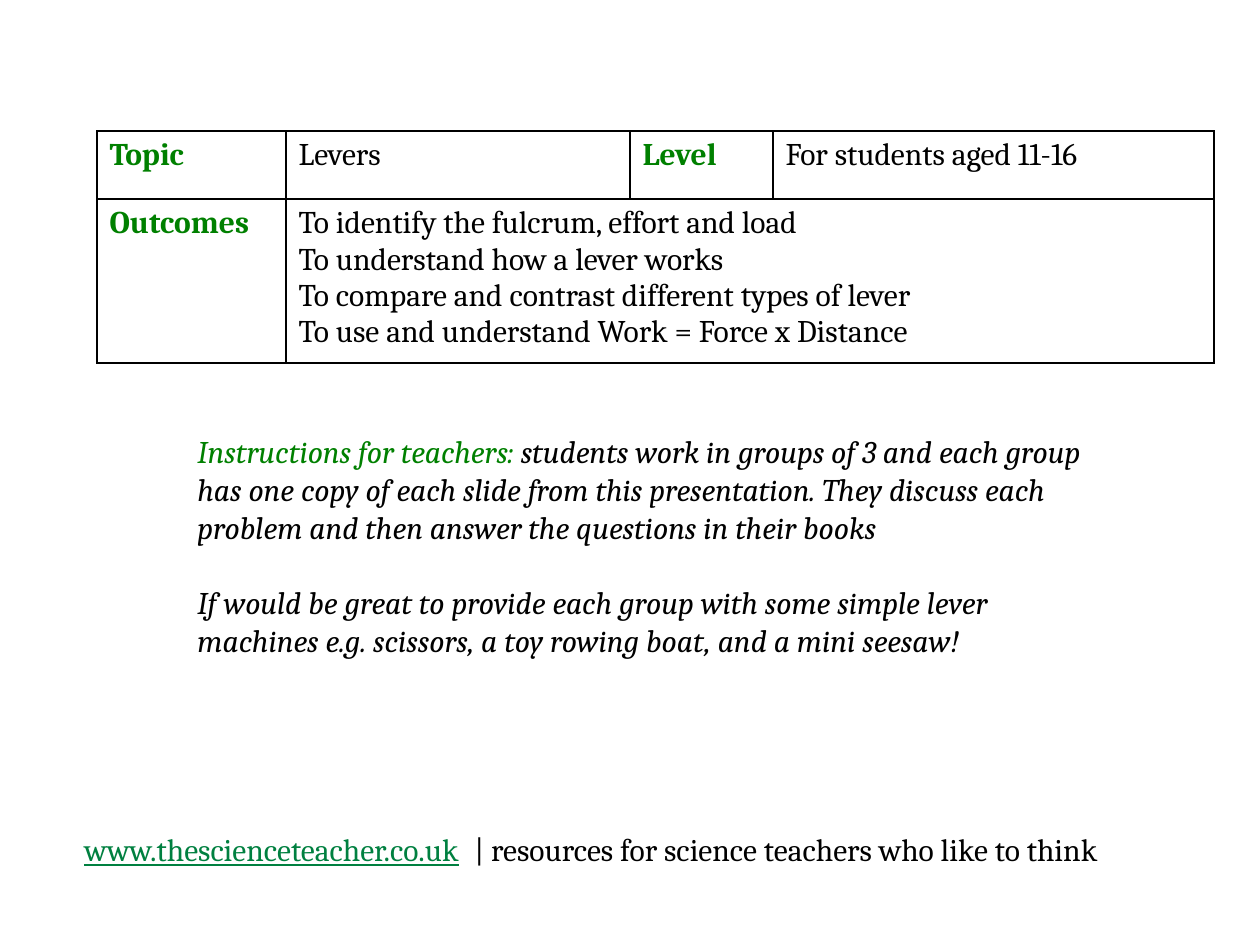
import pptx
import pptx.util
import pptx.dml.color
import pptx.oxml
import pptx.oxml.ns

THEME = {
    "font": "Cambria", "size": 18, "gap": 21.6, "line": 1,
    "ink": "000000", "green": "008000", "link": "008040",
}
SCALE = 914400 / 126


def px(num):
    return pptx.util.Emu(round(num * SCALE))


def add_run(para, text, color="ink", **style):
    """Add one run; style may set bold, italic or underline."""
    run = para.add_run()
    run.text = text
    font = run.font
    font.name = THEME["font"]
    font.size = pptx.util.Pt(THEME["size"])
    font.color.rgb = pptx.dml.color.RGBColor.from_string(THEME[color])
    for key, value in style.items():
        setattr(font, key, value)


deck = pptx.Presentation()
deck.slide_width, deck.slide_height = px(1260), px(945)
slide = deck.slides.add_slide(deck.slide_layouts[6])

# Footer, with a tab stop between the address and the motto
foot = slide.shapes.add_textbox(px(72), px(824), px(1116), px(50)).text_frame
foot.word_wrap = True
para = foot.paragraphs[0]
tabs = pptx.oxml.parse_xml(
    f'<a:tabLst {pptx.oxml.ns.nsdecls("a")}><a:tab pos="{px(390)}" algn="l"/></a:tabLst>')
para._p.get_or_add_pPr().append(tabs)
add_run(para, "www.thescienceteacher.co.uk", "link", underline=True)
add_run(para, "\t", "green")
add_run(para, "| resources for science teachers who like to think")

# Lesson table: heading cells are green and bold
cols = [189, 344, 143, 441]
rows = [68, 164]
cells = [
    (0, 0, True, ["Topic"]),
    (0, 1, False, ["Levers"]),
    (0, 2, True, ["Level"]),
    (0, 3, False, ["For students aged 11-16"]),
    (1, 0, True, ["Outcomes"]),
    (1, 1, False, [
        "To identify the fulcrum, effort and load",
        "To understand how a lever works",
        "To compare and contrast different types of lever",
        "To use and understand Work = Force x Distance",
    ]),
]
frame = slide.shapes.add_table(
    len(rows), len(cols), px(97), px(131), px(sum(cols)), px(sum(rows)))
table = frame.table
table.first_row = table.horz_banding = False
for col, width in zip(table.columns, cols):
    col.width = px(width)
for row, height in zip(table.rows, rows):
    row.height = px(height)
table.cell(1, 1).merge(table.cell(1, 3))

for cell in table.iter_cells():
    props = cell._tc.get_or_add_tcPr()
    for side in "LRTB":
        props.append(pptx.oxml.parse_xml(
            f'<a:ln{side} {pptx.oxml.ns.nsdecls("a")} w="{pptx.util.Pt(THEME["line"])}">'
            f'<a:solidFill><a:srgbClr val="{THEME["ink"]}"/></a:solidFill></a:ln{side}>'))
    cell.fill.background()

for row, col, head, lines in cells:
    text = table.cell(row, col).text_frame
    for num, line in enumerate(lines):
        para = text.add_paragraph() if num else text.paragraphs[0]
        add_run(para, line, "green" if head else "ink", bold=head)

# Notes for teachers
guide = slide.shapes.add_textbox(px(185), px(426), px(942), px(242)).text_frame
guide.word_wrap = True
para = guide.paragraphs[0]
add_run(para, "Instructions for teachers: ", "green", italic=True)
add_run(para, "students work in groups of 3 and each group has one copy of each slide "
        "from this presentation. They discuss each problem and then answer the "
        "questions in their books", italic=True)
para = guide.add_paragraph()
para.space_before = pptx.util.Pt(THEME["gap"])
add_run(para, "If would be great to provide each group with some simple lever machines "
        "e.g. scissors, a toy rowing boat, and a mini seesaw!", italic=True)

deck.save("out.pptx")
